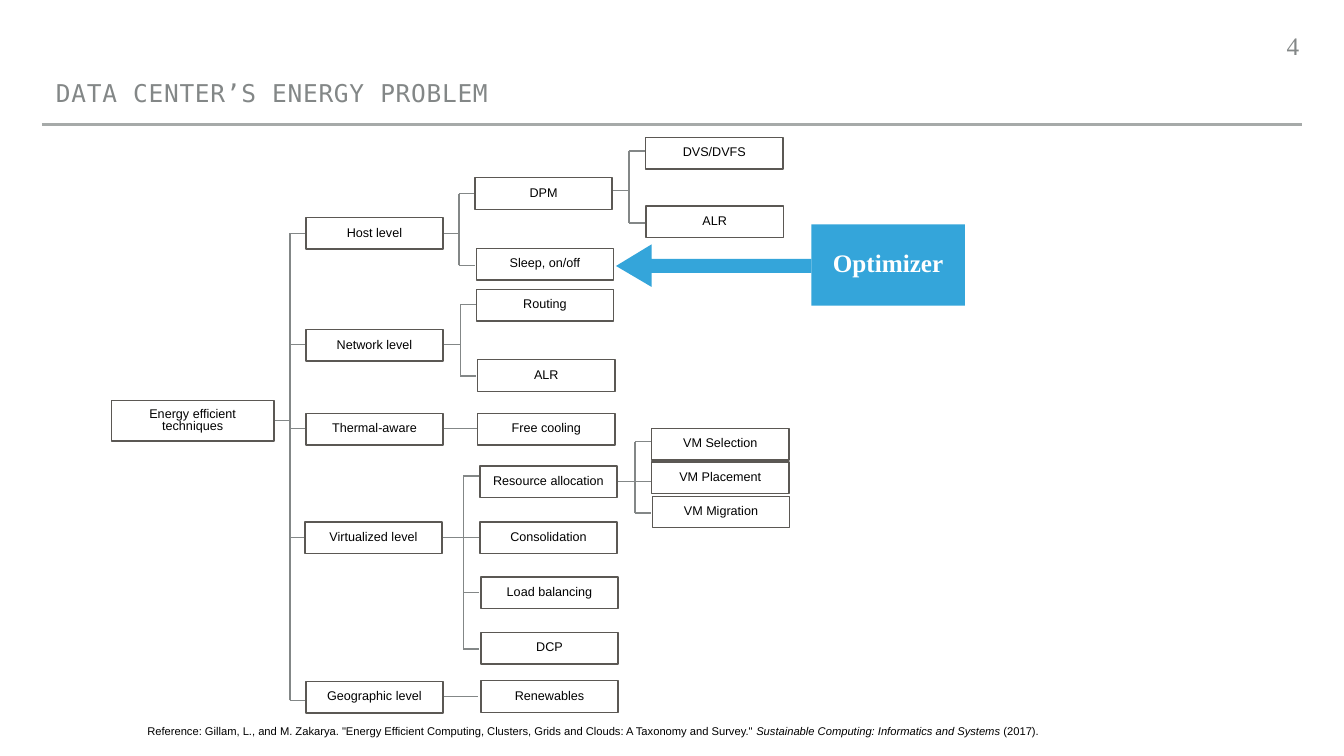
import pptx
import pptx.dml.color
import pptx.enum.shapes
import pptx.enum.text
import pptx.oxml.ns
import pptx.util
from lxml import etree

Pt = pptx.util.Pt
RGB = pptx.dml.color.RGBColor.from_string
ALIGN = pptx.enum.text.PP_ALIGN
ANCHOR = pptx.enum.text.MSO_ANCHOR
RECTANGLE = pptx.enum.shapes.MSO_SHAPE.RECTANGLE
STRAIGHT = pptx.enum.shapes.MSO_CONNECTOR.STRAIGHT

COLORS = {
    "background": "FFFFFF",
    "rule": "A6AAA9",
    "gray": "838787",
    "border": "5B5854",
    "text": "000000",
    "accent": "34A5DA",
    "white": "FFFFFF",
}
BOX_WIDTH, BOX_HEIGHT = 196, 45

presentation = pptx.Presentation()
presentation.slide_width = Pt(1920)
presentation.slide_height = Pt(1080)
slide = presentation.slides.add_slide(presentation.slide_layouts[5])
slide.background.fill.solid()
slide.background.fill.fore_color.rgb = RGB(COLORS["background"])


def add_line(x1, y1, x2, y2, color="gray", width=2):
    line = slide.shapes.add_connector(STRAIGHT, Pt(x1), Pt(y1), Pt(x2), Pt(y2))
    line.line.color.rgb = RGB(COLORS[color])
    line.line.width = Pt(width)
    properties = line._element.spPr
    etree.SubElement(properties, pptx.oxml.ns.qn("a:effectLst"))


def write_text(shape, text, size, font, color, align, spacing=0.8, anchor=ANCHOR.MIDDLE):
    frame = shape.text_frame
    frame.word_wrap = True
    frame.auto_size = pptx.enum.text.MSO_AUTO_SIZE.NONE
    frame.vertical_anchor = anchor
    frame.margin_left = frame.margin_right = Pt(4)
    frame.margin_top = frame.margin_bottom = Pt(4)
    frame.text = text
    for paragraph in frame.paragraphs:
        paragraph.alignment = align
        paragraph.line_spacing = spacing
        paragraph.font.size = Pt(size)
        paragraph.font.name = font
        paragraph.font.color.rgb = RGB(COLORS[color])
    return frame.paragraphs[0]


add_line(60, 178, 1860, 178, "rule", 4)

title = slide.shapes.title
title.left, title.top, title.width, title.height = Pt(76), Pt(102), Pt(1650), Pt(55)
paragraph = write_text(title, "DATA CENTER’S ENERGY PROBLEM", 35, "DejaVu Sans Mono",
                       "gray", ALIGN.LEFT, anchor=ANCHOR.BOTTOM)
paragraph.runs[0].font._element.set("spc", "100")

brackets = [
    (391.5, 601, 414, 436.5, [333.5, 492.5, 612.5, 768, 1000.5]),
    (632.5, 333.5, 655.5, 678.5, [276.5, 379]),
    (875, 272, 898.5, 921, [216, 318.5]),
    (634, 492, 657.5, 680.5, [435, 537]),
    (633, 768, 662, 685, [680, 768, 846.5, 927]),
    (883.5, 687.5, 907, 930.5, [631, 687.5, 733]),
]
for start, parent_y, stem, end, child_ys in brackets:
    add_line(start, parent_y, stem, parent_y)
    add_line(stem, child_ys[-1], stem, child_ys[0])
    for child_y in child_ys:
        add_line(stem, child_y, end, child_y)

for y in (612.5, 995):
    add_line(632, y, 683, y)

boxes = [
    ("Host level", 437, 311),
    ("Network level", 437, 471),
    ("Thermal-aware", 437, 590.5),
    ("Virtualized level", 435.5, 746),
    ("Geographic level", 437, 973.5),
    ("DPM", 678.5, 254),
    ("Sleep, on/off", 680.5, 355),
    ("Routing", 680.5, 413.5),
    ("ALR", 682.5, 514),
    ("Free cooling", 682.5, 590.5),
    ("Resource allocation", 685.5, 665.5),
    ("Consolidation", 685.5, 746),
    ("Load balancing", 687, 824.5),
    ("DCP", 687, 903.5),
    ("Renewables", 687, 972.5),
    ("DVS/DVFS", 922.5, 196.5),
    ("ALR", 923, 294.5),
    ("VM Selection", 931, 612),
    ("VM Placement", 931, 660),
    ("VM Migration", 932, 709),
]
nodes = [(text, x, y, BOX_WIDTH, BOX_HEIGHT) for text, x, y in boxes]
nodes.append(("Energy efficient\ntechniques", 159, 572.5, 232.5, 57.5))
for text, x, y, width, height in nodes:
    box = slide.shapes.add_shape(RECTANGLE, Pt(x), Pt(y), Pt(width), Pt(height))
    box.shadow.inherit = False
    box.fill.background()
    box.line.color.rgb = RGB(COLORS["border"])
    box.line.width = Pt(2)
    write_text(box, text, 18, "Arial", "text", ALIGN.CENTER)

builder = slide.shapes.build_freeform(931, 389.5, scale=Pt(1))
builder.add_line_segments([(931, 410.5), (880.5, 380), (931, 349), (931, 370),
                           (1159, 370), (1159, 389.5)], close=True)
arrow = builder.convert_to_shape()
optimizer = slide.shapes.add_shape(RECTANGLE, Pt(1159), Pt(320.5), Pt(219.5), Pt(116))
for shape in (arrow, optimizer):
    shape.shadow.inherit = False
    shape.fill.solid()
    shape.fill.fore_color.rgb = RGB(COLORS["accent"])
    shape.line.fill.background()
paragraph = write_text(optimizer, "Optimizer", 36, "Times New Roman", "white", ALIGN.CENTER)
paragraph.font.bold = True

reference = slide.shapes.add_textbox(Pt(133), Pt(1030), Pt(1428.5), Pt(27.5))
paragraph = write_text(
    reference,
    "Reference: Gillam, L., and M. Zakarya. \"Energy Efficient Computing, Clusters, "
    "Grids and Clouds: A Taxonomy and Survey.\" ",
    16, "Arial", "text", ALIGN.CENTER, spacing=1.0)
journal = paragraph.add_run()
journal.text = "Sustainable Computing: Informatics and Systems"
journal.font.italic = True
paragraph.add_run().text = " (2017)."

page_number = slide.shapes.add_textbox(Pt(1811), Pt(48), Pt(49), Pt(49))
write_text(page_number, "4", 36, "Times New Roman", "gray", ALIGN.RIGHT, anchor=ANCHOR.TOP)

presentation.save("out.pptx")
